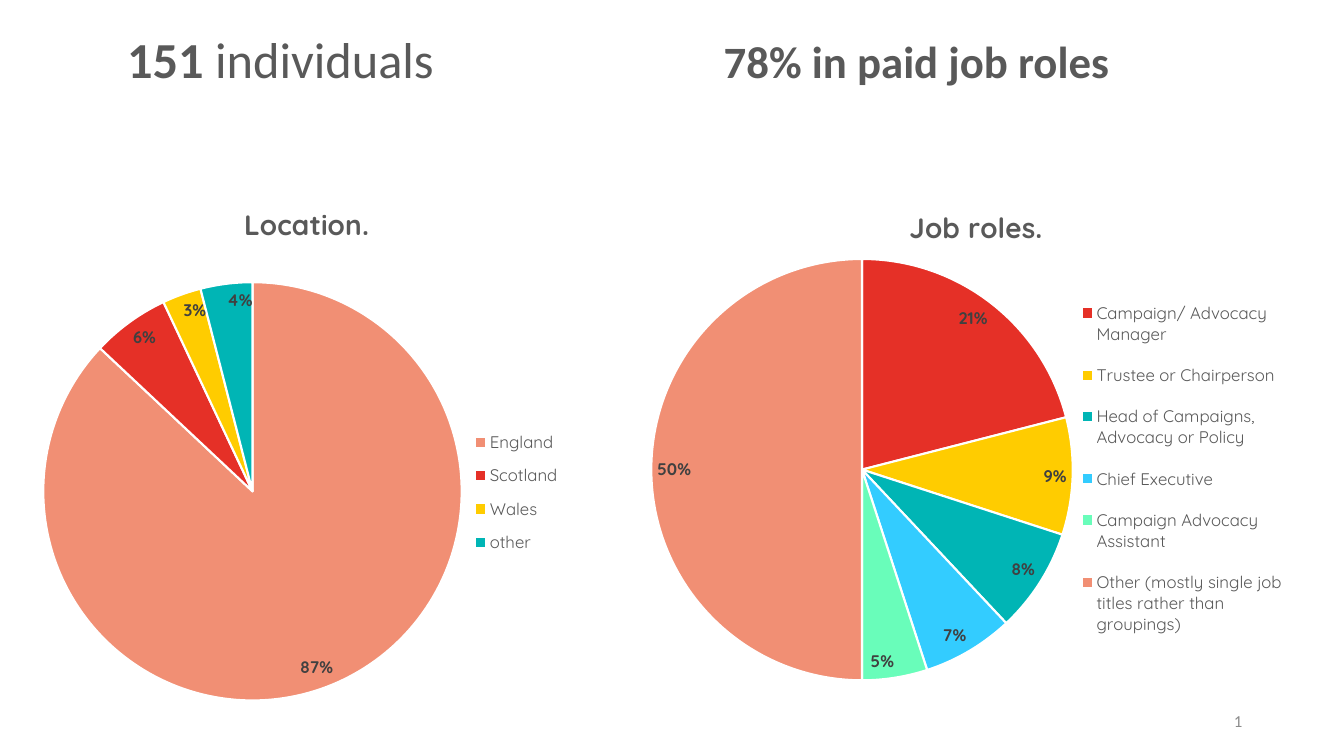
from lxml import etree
from pptx import Presentation
from pptx.chart.data import CategoryChartData
from pptx.dml.color import RGBColor
from pptx.enum.chart import XL_CHART_TYPE as ChartType, XL_LABEL_POSITION as LabelPos
from pptx.enum.chart import XL_LEGEND_POSITION as LegendPos
from pptx.enum.text import MSO_ANCHOR as Anchor, PP_ALIGN as Align
from pptx.oxml import parse_xml
from pptx.oxml.ns import nsdecls, qn
from pptx.util import Inches, Pt

WHITE = RGBColor(0xFF, 0xFF, 0xFF)
BLACK = RGBColor(0, 0, 0)
GREY = RGBColor(0x59, 0x59, 0x59)
DARK = RGBColor(0x40, 0x40, 0x40)
LIGHT = RGBColor(0x8C, 0x8C, 0x8C)
SALMON = RGBColor(0xF1, 0x8F, 0x74)
RED = RGBColor(0xE5, 0x30, 0x27)
YELLOW = RGBColor(0xFF, 0xCC, 0x00)
TEAL = RGBColor(0x00, 0xB5, 0xB5)
BLUE = RGBColor(0x33, 0xCC, 0xFF)
MINT = RGBColor(0x69, 0xFD, 0xBA)


def set_font(font, size, color, name="Quicksand", bold=False):
    font.size, font.name, font.bold = Pt(size), name, bold
    font.color.rgb = color


def write_text(shape, box, runs, size=36, color=GREY, align=Align.LEFT, anchor=Anchor.TOP):
    shape.left, shape.top, shape.width, shape.height = [Inches(v) for v in box]
    tf = shape.text_frame
    tf.word_wrap = True
    tf.vertical_anchor = anchor
    p = tf.paragraphs[0]
    p.alignment = align
    p.line_spacing = 1
    for text, bold in runs:
        r = p.add_run()
        r.text = text
        set_font(r.font, size, color, "Calibri", bold)
    return p


def add_text(slide, box, runs, **fmt):
    return write_text(slide.shapes.add_textbox(0, 0, 0, 0), box, runs, **fmt)


def add_page_number(slide, box, number):
    p = add_text(slide, box, [(number, False)], size=12, color=LIGHT,
                 align=Align.RIGHT, anchor=Anchor.MIDDLE)
    run = p.runs[0]._r
    field = parse_xml(f'<a:fld {nsdecls("a")} type="slidenum" '
                      'id="{B6F15528-21DE-4FAA-801E-634DDDAF4B2B}"/>')
    run.addprevious(field)
    field.extend(list(run))
    p._p.remove(run)


def place(element, chart_box, spot, inner=False):
    for old in element.findall(qn("c:layout")):
        element.remove(old)
    layout = etree.Element(qn("c:layout"))
    manual = etree.SubElement(layout, qn("c:manualLayout"))
    left, top, width, height = chart_box
    values = [(spot[0] - left) / width, (spot[1] - top) / height]
    values += [v / full for v, full in zip(spot[2:], (width, height))]
    settings = [("layoutTarget", "inner")] if inner else []
    settings += [("xMode", "edge"), ("yMode", "edge")]
    settings += [(key, f"{v:.4f}") for key, v in zip("xywh", values)]
    for key, value in settings:
        etree.SubElement(manual, qn(f"c:{key}")).set("val", value)
    before = [c for c in element if c.tag in (qn("c:tx"), qn("c:legendPos"))]
    element.insert(len(before), layout)


def add_pie(slide, box, title, slices, title_spot, pie_spot, legend_spot):
    data = CategoryChartData()
    data.categories = [name for name, _, _ in slices]
    data.add_series("Series 1", [value for _, value, _ in slices])
    frame = slide.shapes.add_chart(ChartType.PIE, *[Inches(v) for v in box], data)
    chart = frame.chart
    set_font(chart.font, 10, BLACK, "Calibri")

    chart.has_title = True
    p = chart.chart_title.text_frame.paragraphs[0]
    r = p.add_run()
    r.text = title
    set_font(r.font, 20, GREY, bold=True)
    chart.chart_title.include_in_layout = False

    chart.has_legend = True
    chart.legend.position = LegendPos.RIGHT
    chart.legend.include_in_layout = False
    set_font(chart.legend.font, 12, GREY)

    plot = chart.plots[0]
    plot.vary_by_categories = True
    for i, (_, _, color) in enumerate(slices):
        fmt = plot.series[0].points[i].format
        fmt.fill.solid()
        fmt.fill.fore_color.rgb = color
        fmt.line.color.rgb = WHITE
        fmt.line.width = Pt(1.5)
    labels = plot.series[0].data_labels
    labels.show_percentage, labels.show_value = True, False
    labels.number_format, labels.number_format_is_linked = "0%", False
    labels.position = LabelPos.INSIDE_END
    set_font(labels.font, 12, DARK, bold=True)

    place(chart.chart_title._element, box, title_spot)
    place(chart.legend._element, box, legend_spot)
    place(plot._element.getparent(), box, pie_spot, inner=True)


def main():
    prs = Presentation()
    prs.slide_width, prs.slide_height = Inches(13.33), Inches(7.5)
    slide = prs.slides.add_slide(prs.slide_layouts[5])
    write_text(slide.shapes.title, (1.16, 0.23, 3.68, 0.71),
               [("151", True), (" individuals", False)])
    add_pie(slide, (-0.32, 1.73, 6.63, 5.37), "Location.",
            [("England", 87, SALMON), ("Scotland", 6, RED),
             ("Wales", 3, YELLOW), ("other", 4, TEAL)],
            title_spot=(2.37, 1.97), pie_spot=(0.43, 2.8, 4.15, 4.15),
            legend_spot=(4.6, 4.16, 1.05, 1.45))
    add_text(slide, (7.08, 0.29, 5.1, 0.64), [("78% in paid job roles", True)], size=32)
    add_pie(slide, (6.19, 1.75, 6.88, 5.39), "Job roles.",
            [("Campaign/ Advocacy Manager", 21, RED),
             ("Trustee or Chairperson", 9, YELLOW),
             ("Head of Campaigns, Advocacy or Policy", 8, TEAL),
             ("Chief Executive", 7, BLUE),
             ("Campaign Advocacy Assistant", 5, MINT),
             ("Other (mostly single job titles rather than groupings)", 50, SALMON)],
            title_spot=(8.97, 2), pie_spot=(6.46, 2.57, 4.18, 4.18),
            legend_spot=(10.65, 2.8, 2.15, 3.7))
    add_page_number(slide, (9.42, 6.95, 3, 0.4), "3")
    prs.save("out.pptx")


if __name__ == "__main__":
    main()
